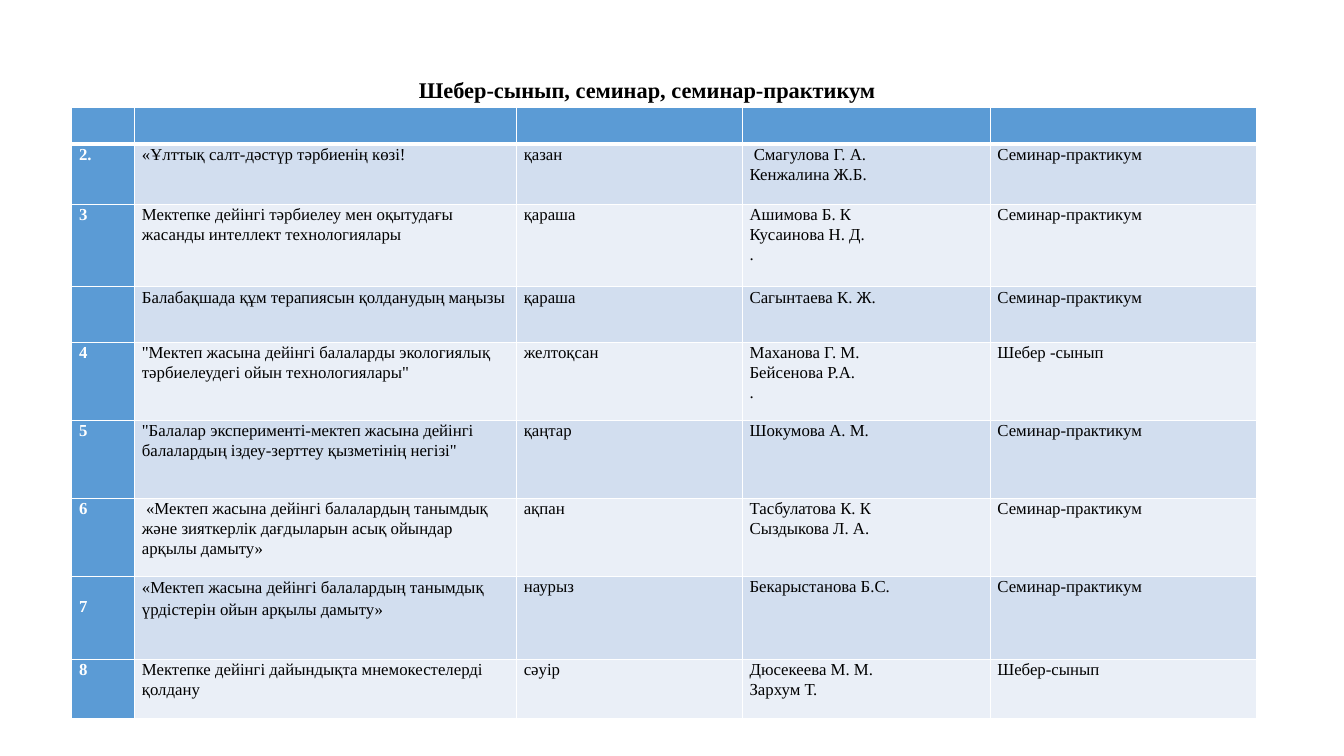
from lxml import etree
from pptx import Presentation
from pptx.dml.color import RGBColor
from pptx.enum import text as t
from pptx.oxml import ns
from pptx.util import Pt

FONT = "Times New Roman"
WHITE = RGBColor(0xFF, 0xFF, 0xFF)
BLACK = RGBColor(0x00, 0x00, 0x00)
BLUE = RGBColor(0x5B, 0x9B, 0xD5)
BANDS = (RGBColor(0xEA, 0xEF, 0xF7), RGBColor(0xD2, 0xDE, 0xEF))

TITLE = "Шебер-сынып, семинар, семинар-практикум"
PRACTICUM = "Семинар-практикум"
COLUMN_WIDTHS = (44.9, 272.8, 161.3, 177, 190)
ROW_HEIGHTS = (26.2, 43.2, 58.7, 39.9, 55.7, 55.7, 55.5, 59.6, 42.5)
ROWS = (
    ("", "", "", "", ""),
    ("2.", "«Ұлттық салт-дәстүр тәрбиенің көзі!", "қазан",
     " Смагулова Г. А.\nКенжалина Ж.Б.", PRACTICUM),
    ("3", "Мектепке дейінгі тәрбиелеу мен оқытудағы жасанды интеллект технологиялары",
     "қараша", "Ашимова Б. К\nКусаинова Н. Д.\n.", PRACTICUM),
    ("", "Балабақшада құм терапиясын қолданудың маңызы", "қараша",
     "Сагынтаева К. Ж.", PRACTICUM),
    ("4", "\"Мектеп жасына дейінгі балаларды экологиялық тәрбиелеудегі ойын технологиялары\"",
     "желтоқсан", "Маханова Г. М.\nБейсенова Р.А.\n.", "Шебер -сынып"),
    ("5", "\"Балалар эксперименті-мектеп жасына дейінгі балалардың іздеу-зерттеу қызметінің негізі\"",
     "қаңтар", "Шокумова А. М.", PRACTICUM),
    ("6", " «Мектеп жасына дейінгі балалардың танымдық және зияткерлік дағдыларын асық ойындар арқылы дамыту»",
     "ақпан", "Тасбулатова К. К\nСыздыкова Л. А.", PRACTICUM),
    ("7", "«Мектеп жасына дейінгі балалардың танымдық үрдістерін ойын арқылы дамыту»",
     "наурыз", "Бекарыстанова Б.С.", PRACTICUM),
    ("8", "Мектепке дейінгі дайындықта мнемокестелерді қолдану", "сәуір",
     "Дюсекеева М. М.\nЗархум Т.", "Шебер-сынып"),
)


def write_text(frame, content, size=12, color=BLACK, bold=False, spacing=1.07):
    frame.text = content
    for paragraph in frame.paragraphs:
        paragraph.alignment = t.PP_ALIGN.LEFT
        paragraph.line_spacing = spacing
        paragraph.font.size = Pt(size)
        for run in paragraph.runs:
            run.font.name = FONT
            run.font.size = Pt(size)
            run.font.bold = bold
            run.font.color.rgb = color


def add_title(slide):
    title = slide.shapes.title
    title.left, title.top = Pt(293.8), Pt(49.7)
    title.width, title.height = Pt(440.6), Pt(42.5)
    frame = title.text_frame
    frame.word_wrap = True
    frame.auto_size = t.MSO_AUTO_SIZE.NONE
    frame.vertical_anchor = t.MSO_ANCHOR.TOP
    frame.margin_left = frame.margin_right = Pt(5.4)
    frame.margin_top = frame.margin_bottom = Pt(3.5)
    write_text(frame, TITLE, size=16, bold=True)


def set_borders(cell, top, bottom):
    properties = cell._tc.get_or_add_tcPr()
    for side, width in (("L", 1), ("R", 1), ("T", top), ("B", bottom)):
        line = etree.SubElement(properties, ns.qn(f"a:ln{side}"), w=str(Pt(width)))
        fill = etree.SubElement(line, ns.qn("a:solidFill"))
        etree.SubElement(fill, ns.qn("a:srgbClr"), val=str(WHITE))


def format_cell(cell, row, column, content):
    is_blue = row == 0 or column == 0
    set_borders(cell, top=3 if row == 1 else 1, bottom=3 if row == 0 else 1)
    cell.fill.solid()
    cell.fill.fore_color.rgb = BLUE if is_blue else BANDS[row % 2]
    cell.margin_left = cell.margin_right = Pt(5.2)
    cell.margin_top = Pt(14.5) if content == "7" else 0
    cell.margin_bottom = 0
    write_text(cell.text_frame, content, bold=is_blue,
               color=WHITE if is_blue else BLACK,
               spacing=1.15 if (row, column) == (7, 1) else 1.07)


def add_schedule(slide):
    table = slide.shapes.add_table(
        len(ROWS), len(COLUMN_WIDTHS), Pt(51.3), Pt(76.8),
        Pt(sum(COLUMN_WIDTHS)), Pt(sum(ROW_HEIGHTS))).table
    table.first_col = True
    for column, width in zip(table.columns, COLUMN_WIDTHS):
        column.width = Pt(width)
    for row, (height, contents) in enumerate(zip(ROW_HEIGHTS, ROWS)):
        table.rows[row].height = Pt(height)
        for column, content in enumerate(contents):
            format_cell(table.cell(row, column), row, column, content)


def main():
    presentation = Presentation()
    presentation.slide_width, presentation.slide_height = Pt(960), Pt(540)
    slide = presentation.slides.add_slide(presentation.slide_layouts[5])
    add_schedule(slide)
    add_title(slide)
    presentation.save("out.pptx")


if __name__ == "__main__":
    main()
